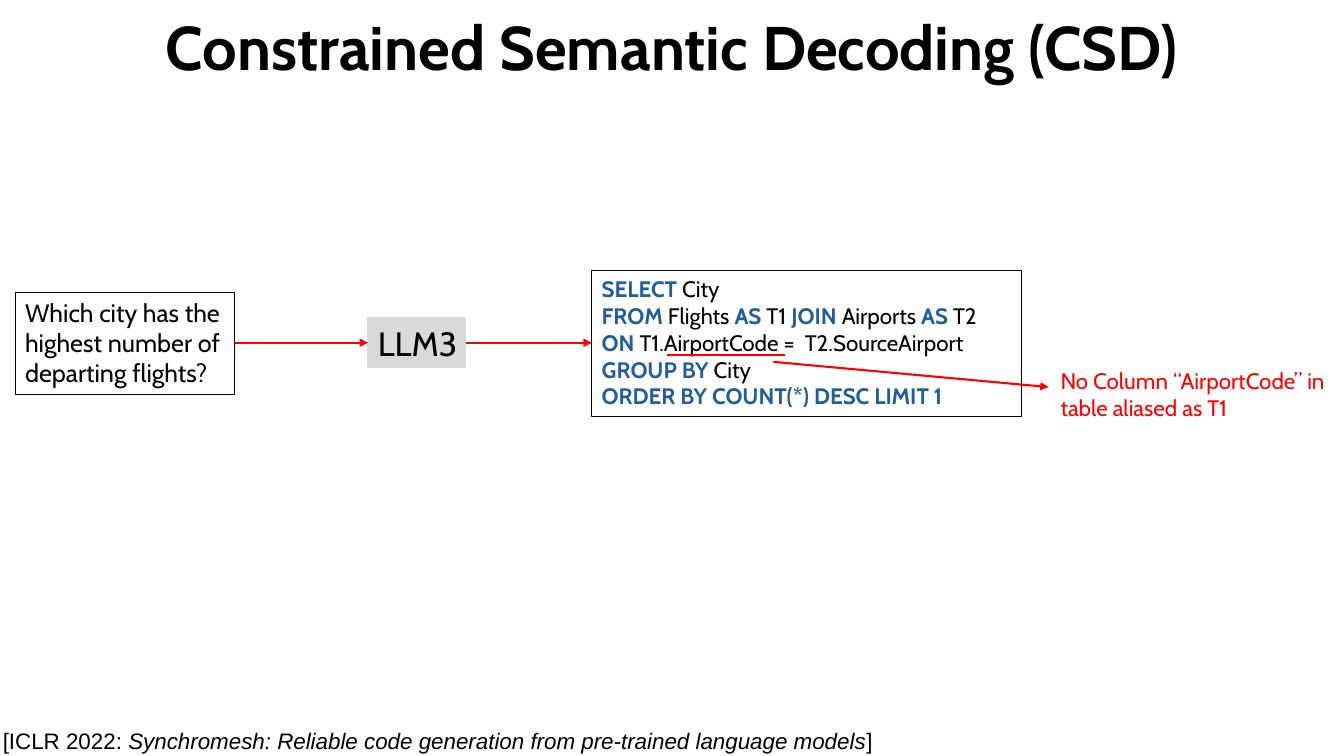
import itertools
from dataclasses import dataclass

import pptx
import pptx.dml.color
import pptx.enum.shapes
import pptx.enum.text
import pptx.oxml
import pptx.oxml.ns
import pptx.util

PX = 9144


@dataclass(frozen=True)
class Theme:
    """Colours, fonts and sizes of the slide."""
    ink: str = "000000"
    keyword: str = "215F9A"
    alert: str = "FF0000"
    model: str = "D9D9D9"
    font: str = "Cabin"
    source_font: str = "Arial"
    title: int = 44
    label: int = 24
    body: int = 18
    small: int = 16
    border: float = 0.75
    arrow: float = 1.5


@dataclass(frozen=True)
class Style:
    """Look of one span of text."""
    size: int
    color: str = Theme.ink
    font: str = Theme.font
    bold: bool = False
    italic: bool = False


THEME = Theme()
QUERY = [
    "SELECT| City",
    "FROM| Flights |AS| T1 |JOIN |Airports |AS| T2",
    "ON| T1.AirportCode =  T2.SourceAirport",
    "GROUP BY |City",
    "ORDER BY COUNT(*) DESC LIMIT 1",
]


def rgb(color):
    """Turn a hex string into a colour."""
    return pptx.dml.color.RGBColor.from_string(color)


def scaled(box):
    """Turn px lengths into EMU."""
    return [length * PX for length in box]


def write(shape, lines, *styles):
    """Write lines whose spans, split by bars, take the styles in turn."""
    frame = shape.text_frame
    frame.text = "\n".join(line.replace("|", "") for line in lines)
    for para, line in zip(frame.paragraphs, lines):
        para.text = ""
        para.alignment = pptx.enum.text.PP_ALIGN.LEFT
        for text, style in zip(line.split("|"), itertools.cycle(styles)):
            span = para.add_run()
            span.text = text
            span.font.name = style.font
            span.font.size = pptx.util.Pt(style.size)
            span.font.bold = style.bold
            span.font.italic = style.italic
            span.font.color.rgb = rgb(style.color)


def add_title(page, box, text):
    """Place the centred slide title."""
    title = page.shapes.title
    title.left, title.top, title.width, title.height = scaled(box)
    write(title, [text], Style(THEME.title, bold=True))
    frame = title.text_frame
    frame.auto_size = pptx.enum.text.MSO_AUTO_SIZE.NONE
    frame.vertical_anchor = pptx.enum.text.MSO_ANCHOR.MIDDLE
    frame.paragraphs[0].alignment = pptx.enum.text.PP_ALIGN.CENTER
    frame.paragraphs[0].line_spacing = 0.9


def add_panel(page, box, lines, *styles, fill=None, wrap=True):
    """Place a bordered rectangle with text."""
    panel = page.shapes.add_shape(
        pptx.enum.shapes.MSO_SHAPE.RECTANGLE, *scaled(box))
    panel.shadow.inherit = False
    if fill:
        panel.fill.solid()
        panel.fill.fore_color.rgb = rgb(fill)
    else:
        panel.fill.background()
    panel.line.color.rgb = rgb(fill or THEME.ink)
    panel.line.width = pptx.util.Pt(THEME.border)
    panel.text_frame.word_wrap = wrap
    panel.text_frame.vertical_anchor = pptx.enum.text.MSO_ANCHOR.TOP
    write(panel, lines, *styles)


def add_note(page, box, text, *styles):
    """Place wrapped text without a border."""
    note = page.shapes.add_textbox(*scaled(box))
    note.text_frame.word_wrap = True
    write(note, [text], *styles)


def add_line(page, start, end, arrow=True):
    """Draw a red line, with an arrowhead at its end if wanted."""
    line = page.shapes.add_connector(
        pptx.enum.shapes.MSO_CONNECTOR.STRAIGHT, *scaled(start + end))
    line.line.color.rgb = rgb(THEME.alert)
    line.line.width = pptx.util.Pt(THEME.arrow)
    if arrow:
        head = pptx.oxml.parse_xml(
            f'<a:tailEnd {pptx.oxml.ns.nsdecls("a")} type="triangle"/>')
        line.line._get_or_add_ln().append(head)
    line._element.spPr.append(pptx.oxml.parse_xml(
        f'<a:effectLst {pptx.oxml.ns.nsdecls("a")}/>'))


def add_pipeline(page, box):
    """Place question, model and query from left to right with arrows."""
    left, top, width, height = box
    middle = top + height // 2
    question = (left, middle - 50, 218, 101)
    model = (left + 350, middle - 25, 97, 50)
    query = (left + width - 426, top, 426, height)
    add_panel(page, question,
              ["Which city has the highest number of departing flights?"],
              Style(THEME.body))
    add_panel(page, query, QUERY,
              Style(THEME.small, THEME.keyword, bold=True), Style(THEME.small))
    add_panel(page, model, ["LLM3"], Style(THEME.label),
              fill=THEME.model, wrap=False)
    for source, target in itertools.pairwise([question, model, query]):
        add_line(page, (source[0] + source[2], middle), (target[0], middle))


def add_error(page, box):
    """Underline the wrong column and point from it to the error note."""
    left, top, width, height = box
    add_line(page, (left - 380, top - 7), (left - 263, top - 7), arrow=False)
    add_line(page, (left - 275, top), (left - 2, top + 25))
    add_note(page, box, "No Column “AirportCode” in table aliased as T1",
             Style(THEME.small, THEME.alert))


def main():
    """Build and save the slide."""
    deck = pptx.Presentation()
    deck.slide_width, deck.slide_height = scaled((1333, 750))
    page = deck.slides.add_slide(deck.slide_layouts[5])
    add_title(page, (0, -2, 1333, 104), "Constrained Semantic Decoding (CSD)")
    add_pipeline(page, (15, 268, 998, 145))
    add_error(page, (1042, 359, 292, 64))
    source = Style(THEME.small, font=THEME.source_font)
    work = Style(THEME.small, font=THEME.source_font, italic=True)
    add_note(page, (-7, 716, 894, 37),
             "[ICLR 2022: |Synchromesh: Reliable code generation from "
             "pre-trained language models|]", source, work)
    deck.save("out.pptx")


if __name__ == "__main__":
    main()
